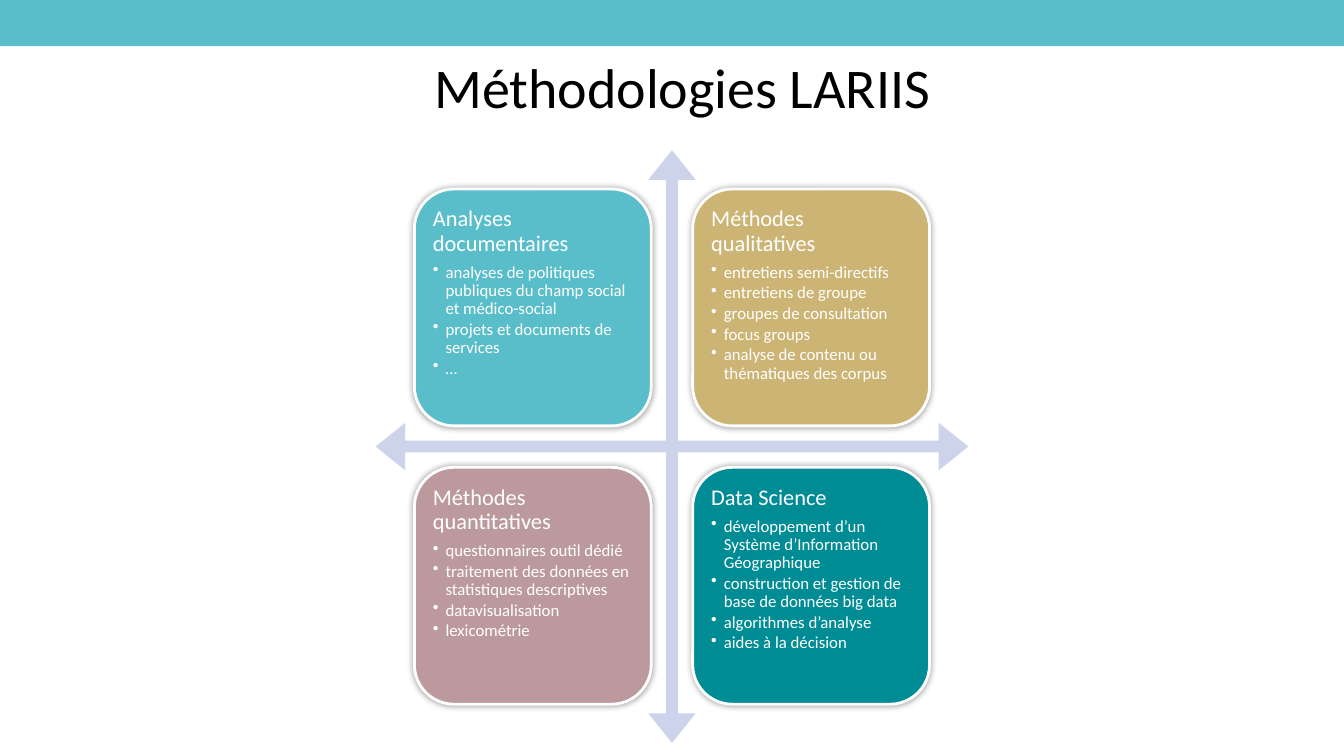
"""Build the LARIIS methodology slide: four rounded cards around a four-way arrow."""
from dataclasses import dataclass
from typing import Any

from lxml.etree import SubElement
from pptx import Presentation
from pptx.dml.color import RGBColor
from pptx.enum.shapes import MSO_SHAPE
from pptx.enum.text import MSO_ANCHOR, MSO_AUTO_SIZE, PP_ALIGN
from pptx.oxml.ns import qn
from pptx.util import Pt

WHITE = RGBColor(0xFF, 0xFF, 0xFF)
BLACK = RGBColor(0x00, 0x00, 0x00)
TURQUOISE = RGBColor(0x59, 0xBE, 0xC9)
SAND = RGBColor(0xCC, 0xB4, 0x74)
ROSE = RGBColor(0xBC, 0x99, 0x9D)
TEAL = RGBColor(0x00, 0x8C, 0x95)
LAVENDER = RGBColor(0xCC, 0xD3, 0xEA)

PAGE_WIDTH, PAGE_HEIGHT = 960, 540
CENTER_X, CENTER_Y = 480, 319
ARROW_SIZE = 423.4
CARD_SIZE = 169.2
CARD_GAP = 29.6
BULLET_INDENT = 9

CARD_FRAME = {
    "word_wrap": True,
    "auto_size": MSO_AUTO_SIZE.NONE,
    "vertical_anchor": MSO_ANCHOR.TOP,
    **{f"margin_{side}": Pt(5) for side in ("left", "top", "right", "bottom")},
}
TITLE_FRAME = {
    **CARD_FRAME,
    **{f"margin_{side}": Pt(3.6) for side in ("left", "top", "right", "bottom")},
}
HEADING_FONT = {"size": Pt(16), "name": "Calibri", "bold": False}
ITEM_FONT = {**HEADING_FONT, "size": Pt(12)}
TITLE_FONT = {**HEADING_FONT, "size": Pt(40)}
CARD_PARAGRAPH = {"alignment": PP_ALIGN.LEFT, "line_spacing": 0.9, "space_after": Pt(0)}


@dataclass(frozen=True)
class Card:
    """One method family with its place in the two-by-two grid."""
    column: int
    row: int
    color: RGBColor
    heading: str
    items: tuple[str, ...]


CARDS = (
    Card(0, 0, TURQUOISE, "Analyses documentaires", (
        "analyses de politiques publiques du champ social et médico-social",
        "projets et documents de services",
        "…",
    )),
    Card(1, 0, SAND, "Méthodes qualitatives", (
        "entretiens semi-directifs",
        "entretiens de groupe",
        "groupes de consultation",
        "focus groups",
        "analyse de contenu ou thématiques des corpus",
    )),
    Card(0, 1, ROSE, "Méthodes quantitatives", (
        "questionnaires outil dédié",
        "traitement des données en statistiques descriptives",
        "datavisualisation",
        "lexicométrie",
    )),
    Card(1, 1, TEAL, "Data Science", (
        "développement d’un Système d’Information Géographique",
        "construction et gestion de base de données big data",
        "algorithmes d’analyse",
        "aides à la décision",
    )),
)


def apply_format(target: Any, values: dict[str, Any]) -> None:
    """Set every attribute listed in the format values."""
    for name, value in values.items():
        setattr(target, name, value)


def add_span(para: Any, text: str, font: dict[str, Any], color: RGBColor) -> None:
    """Add one formatted run to a paragraph."""
    span = para.add_run()
    span.text = text
    apply_format(span.font, font)
    span.font.color.rgb = color


def add_box(page: Any, kind: MSO_SHAPE, left: float, top: float,
            width: float, height: float, color: RGBColor) -> Any:
    """Add a flat filled shape without an outline."""
    box = page.shapes.add_shape(kind, Pt(left), Pt(top), Pt(width), Pt(height))
    box.shadow.inherit = False
    box.fill.solid()
    box.fill.fore_color.rgb = color
    box.line.fill.background()
    return box


def add_glow_shadow(box: Any) -> None:
    """Surround a shape with a soft, centred shadow."""
    effects = box._element.spPr.find(qn("a:effectLst"))
    shadow = SubElement(effects, qn("a:outerShdw"), blurRad=str(Pt(5)), dist="0",
                        dir="0", rotWithShape="0")
    tint = SubElement(shadow, qn("a:srgbClr"), val=str(BLACK))
    SubElement(tint, qn("a:alpha"), val="40000")


def add_bullet(para: Any) -> None:
    """Give a paragraph a hanging white bullet."""
    properties = para._p.get_or_add_pPr()
    properties.set("marL", str(Pt(BULLET_INDENT)))
    properties.set("indent", str(-Pt(BULLET_INDENT)))
    bullet_color = SubElement(properties, qn("a:buClr"))
    SubElement(bullet_color, qn("a:srgbClr"), val=str(WHITE))
    SubElement(properties, qn("a:buChar"), char="•")


def add_card(page: Any, card: Card) -> None:
    """Draw one card with its heading and bulleted items."""
    pitch = CARD_SIZE + CARD_GAP
    inset = CARD_SIZE + CARD_GAP / 2
    box = add_box(page, MSO_SHAPE.ROUNDED_RECTANGLE,
                  CENTER_X - inset + card.column * pitch,
                  CENTER_Y - inset + card.row * pitch,
                  CARD_SIZE, CARD_SIZE, card.color)
    box.adjustments[0] = 0.167
    box.line.color.rgb = WHITE
    box.line.width = Pt(2)
    add_glow_shadow(box)
    frame = box.text_frame
    apply_format(frame, CARD_FRAME)
    heading = frame.paragraphs[0]
    apply_format(heading, CARD_PARAGRAPH)
    add_span(heading, card.heading, HEADING_FONT, WHITE)
    for index, item in enumerate(card.items):
        para = frame.add_paragraph()
        add_bullet(para)
        apply_format(para, {**CARD_PARAGRAPH, "level": 1,
                            "space_before": Pt(1.8 if index else 5.6)})
        add_span(para, item, ITEM_FONT, WHITE)


def add_title(page: Any, text: str) -> None:
    """Place and fill the title placeholder."""
    title = page.shapes.title
    apply_format(title, {"left": Pt(176.4), "top": Pt(33.8),
                         "width": Pt(622), "height": Pt(55.4)})
    apply_format(title.text_frame, TITLE_FRAME)
    para = title.text_frame.paragraphs[0]
    para.alignment = PP_ALIGN.CENTER
    add_span(para, text, TITLE_FONT, BLACK)


def main() -> None:
    """Create the deck and save it."""
    deck = Presentation()
    apply_format(deck, {"slide_width": Pt(PAGE_WIDTH), "slide_height": Pt(PAGE_HEIGHT)})
    page = deck.slides.add_slide(deck.slide_layouts.get_by_name("Title Only"))
    add_box(page, MSO_SHAPE.RECTANGLE, 0, 0, PAGE_WIDTH, 33, TURQUOISE)
    add_title(page, "Méthodologies LARIIS")
    arrow = add_box(page, MSO_SHAPE.QUAD_ARROW, CENTER_X - ARROW_SIZE / 2,
                    CENTER_Y - ARROW_SIZE / 2, ARROW_SIZE, ARROW_SIZE, LAVENDER)
    for index, value in enumerate((0.02, 0.04, 0.05)):
        arrow.adjustments[index] = value
    for card in CARDS:
        add_card(page, card)
    deck.save("out.pptx")


if __name__ == "__main__":
    main()
